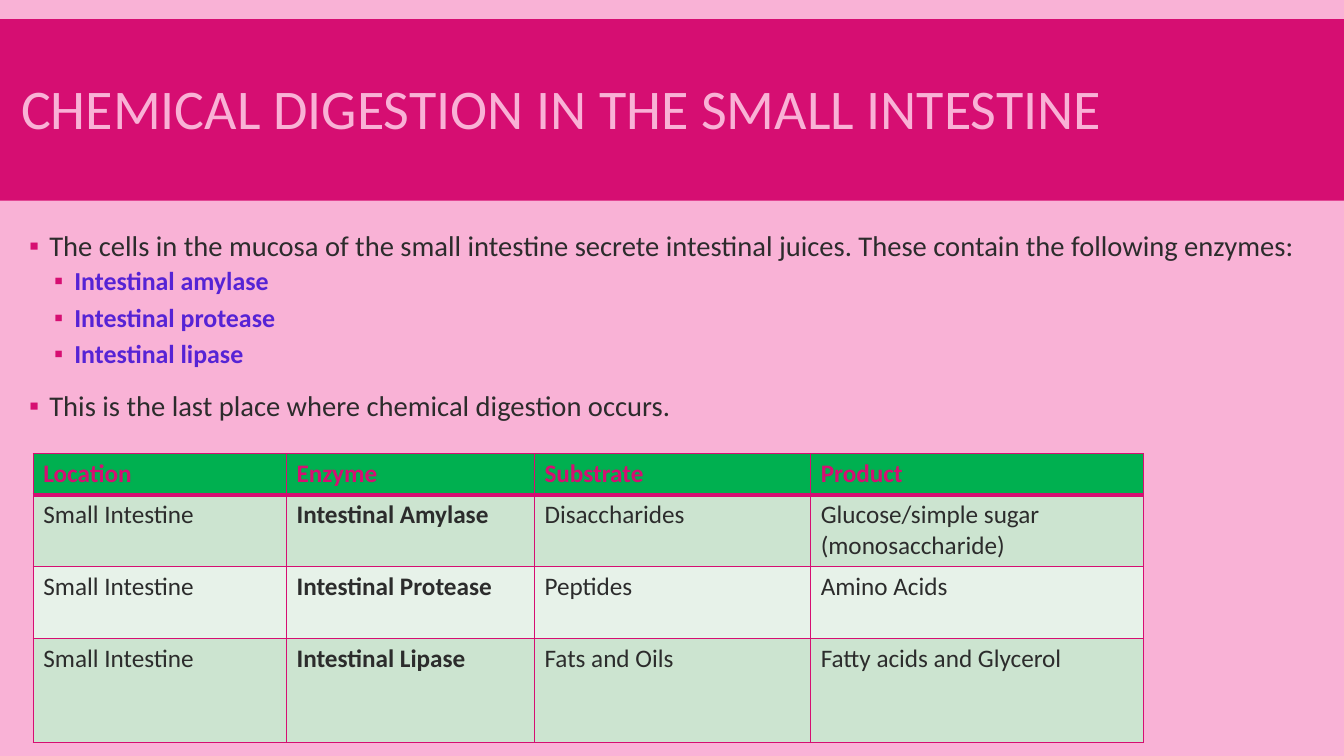
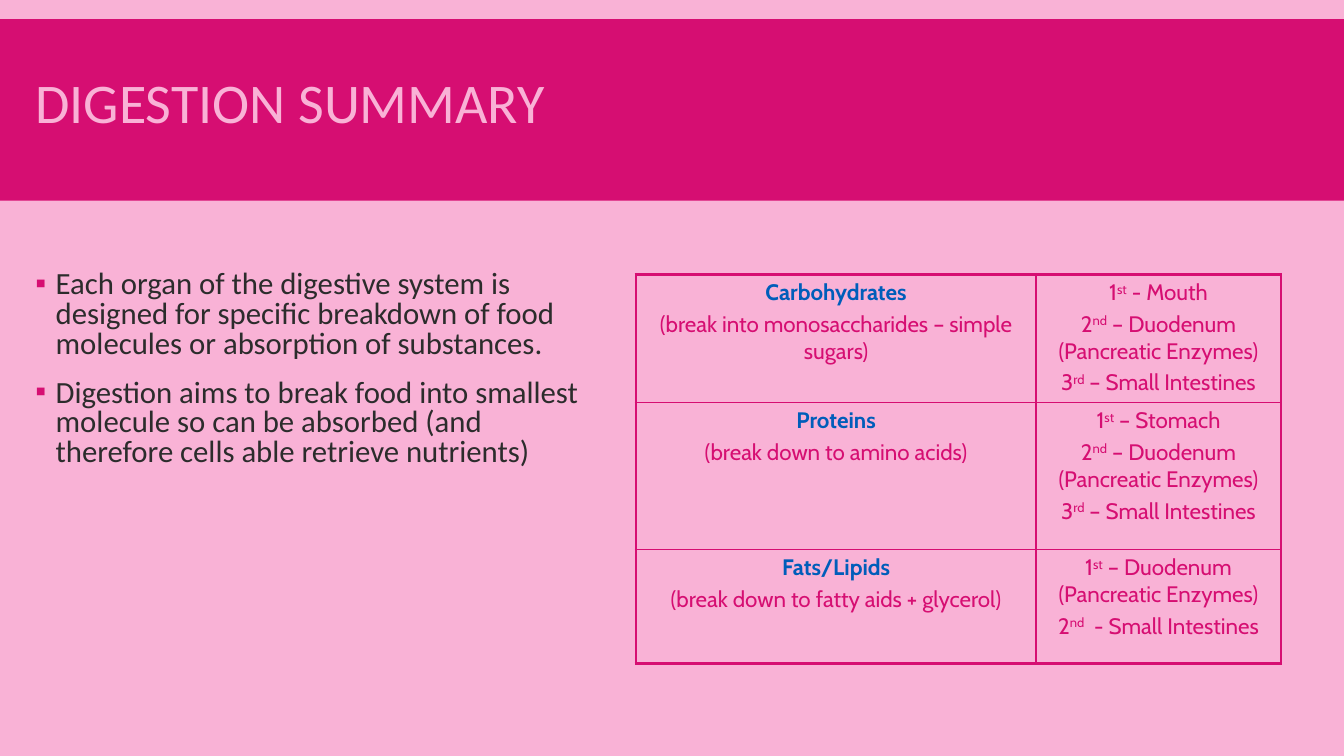
from lxml.etree import SubElement
from pptx import Presentation
from pptx.dml.color import RGBColor
from pptx.enum.shapes import MSO_SHAPE
from pptx.enum.text import MSO_ANCHOR, MSO_AUTO_SIZE, PP_ALIGN
from pptx.oxml.ns import qn
from pptx.util import Cm, Pt

COLOURS = {
    "background": "F9B2D6",
    "accent": "D60E72",
    "text": "2C2C2C",
    "enzyme": "5623D5",
    "nutrient": "005DBA",
    "header": "00B050",
    "odd_row": "CCE4D0",
    "even_row": "E7F2E9",
}
TITLE_FORMAT = {"name": "Calibri", "size": Pt(40), "bold": False}
ENZYME_FORMAT = {"name": "Calibri", "size": Pt(18)}
SUMMARY_FORMAT = {"name": "Cabin", "size": Pt(16)}
ORDINALS = ("st", "nd", "rd")


def write_run(paragraph, text, colour, formats):
    run = paragraph.add_run()
    run.text = text
    for attribute, value in formats.items():
        setattr(run.font, attribute, value)
    run.font.color.rgb = RGBColor.from_string(COLOURS[colour])
    return run


def draw_borders(cell, widths):
    """Widths in points: left, right, top, bottom."""
    properties = cell._tc.get_or_add_tcPr()
    for side, width in zip(("lnL", "lnR", "lnT", "lnB"), widths):
        line = SubElement(properties, qn(f"a:{side}"), w=str(Pt(width)))
        fill = SubElement(line, qn("a:solidFill"))
        SubElement(fill, qn("a:srgbClr"), val=COLOURS["accent"])


presentation = Presentation()
presentation.slide_width = Cm(33.87)
presentation.slide_height = Cm(19.05)
layout = presentation.slide_layouts[1]

# Shared background
master_fill = presentation.slide_master.background.fill
master_fill.solid()
master_fill.fore_color.rgb = RGBColor.from_string(COLOURS["background"])

# Titles and bullet lists; each bullet is (level, text)
contents = [
    {
        "title": "CHEMICAL DIGESTION IN THE SMALL INTESTINE",
        "title_box": (0.28, 0.74, 31.29, 4.19),
        "list_box": (0.48, 5.72, 32.64, 5.5),
        "size": 20.4,
        "line_spacing": 0.9,
        "bullets": [
            (0, "The cells in the mucosa of the small intestine secrete intestinal juices. "
                "These contain the following enzymes:"),
            (1, "Intestinal amylase"),
            (1, "Intestinal protease"),
            (1, "Intestinal lipase"),
            (0, "This is the last place where chemical digestion occurs."),
        ],
    },
    {
        "title": "DIGESTION SUMMARY",
        "title_box": (0.64, 0.58, 27.18, 4.19),
        "list_box": (0.64, 6.71, 14.71, 12.17),
        "size": 22,
        "line_spacing": 0.8,
        "bullets": [
            (0, "Each organ of the digestive system is designed for specific breakdown "
                "of food molecules or absorption of substances."),
            (0, "Digestion aims to break food into smallest molecule so can be absorbed "
                "(and therefore cells able retrieve nutrients)"),
        ],
    },
]

slides = []
for content in contents:
    slide = presentation.slides.add_slide(layout)
    slides.append(slide)
    title, bullet_list = slide.shapes.title, slide.placeholders[1]
    for holder, box in ((title, content["title_box"]), (bullet_list, content["list_box"])):
        holder.left, holder.top, holder.width, holder.height = map(Cm, box)
        holder.text_frame.auto_size = MSO_AUTO_SIZE.NONE
        holder.text_frame.word_wrap = True

    title.text_frame.vertical_anchor = MSO_ANCHOR.MIDDLE
    heading = title.text_frame.paragraphs[0]
    heading.alignment = PP_ALIGN.LEFT
    heading.line_spacing = 0.85
    write_run(heading, content["title"], "background", TITLE_FORMAT)

    for index, (level, text) in enumerate(content["bullets"]):
        frame = bullet_list.text_frame
        bullet = frame.add_paragraph() if index else frame.paragraphs[0]
        bullet.level = level
        bullet.line_spacing = content["line_spacing"]
        bullet.space_before = Pt(2 if level else 12)
        bullet.space_after = Pt(4 if level else 2)
        properties = bullet._p.get_or_add_pPr()
        properties.set("marL", str(Cm(1.14 if level else 0.51)))
        properties.set("indent", str(Cm(-0.51)))
        marker_colour = SubElement(properties, qn("a:buClr"))
        SubElement(marker_colour, qn("a:srgbClr"), val=COLOURS["accent"])
        SubElement(properties, qn("a:buChar"), char="▪")
        size = Pt(18.5 if level else content["size"])
        write_run(bullet, text, "enzyme" if level else "text",
                  {"name": "Calibri", "size": size, "bold": bool(level)})

# Title band, moved to the layout so that both slides share it
band = slides[0].shapes.add_shape(
    MSO_SHAPE.RECTANGLE, 0, Cm(0.48), presentation.slide_width, Cm(4.58))
band.shadow.inherit = False
band.fill.solid()
band.fill.fore_color.rgb = RGBColor.from_string(COLOURS["accent"])
band.line.fill.background()
layout.shapes._spTree.insert(2, band._element)

# Enzyme table
enzyme_rows = [
    ("Location", "Enzyme", "Substrate", "Product"),
    ("Small Intestine", "Intestinal Amylase", "Disaccharides",
     "Glucose/simple sugar (monosaccharide)"),
    ("Small Intestine", "Intestinal Protease", "Peptides", "Amino Acids"),
    ("Small Intestine", "Intestinal Lipase", "Fats and Oils", "Fatty acids and Glycerol"),
]
enzyme_table = slides[0].shapes.add_table(
    4, 4, Cm(0.84), Cm(11.43), Cm(27.97), Cm(7.27)).table
for column, width in zip(enzyme_table.columns, (6.38, 6.25, 6.96, 8.38)):
    column.width = Cm(width)
for row, height in zip(enzyme_table.rows, (1.04, 1.81, 1.81, 2.61)):
    row.height = Cm(height)
for r, texts in enumerate(enzyme_rows):
    row_fill = "header" if r == 0 else ("odd_row" if r % 2 else "even_row")
    for c, text in enumerate(texts):
        cell = enzyme_table.cell(r, c)
        draw_borders(cell, (1, 1, 3 if r == 1 else 1, 3 if r == 0 else 1))
        cell.fill.solid()
        cell.fill.fore_color.rgb = RGBColor.from_string(COLOURS[row_fill])
        write_run(cell.text_frame.paragraphs[0], text, "text" if r else "accent",
                  ENZYME_FORMAT | {"bold": r == 0 or c == 1})

# Summary table: nutrient, result, places of digestion in order
summary_rows = [
    ("Carbohydrates", "(break into monosaccharides – simple sugars)",
     (" - Mouth", " – Duodenum (Pancreatic Enzymes)", " – Small Intestines")),
    ("Proteins", "(break down to amino acids)",
     (" – Stomach", " – Duodenum (Pancreatic Enzymes)", " – Small Intestines")),
    ("Fats/Lipids", "(break down to fatty aids + glycerol)",
     (" – Duodenum (Pancreatic Enzymes)", "  - Small Intestines")),
]
summary_table = slides[1].shapes.add_table(
    3, 2, Cm(16.03), Cm(6.91), Cm(16.25), Cm(9.8)).table
summary_table.first_row = False
summary_table.horz_banding = False
for column, width in zip(summary_table.columns, (10.08, 6.17)):
    column.width = Cm(width)
for row, height in zip(summary_table.rows, (3.23, 3.7, 2.87)):
    row.height = Cm(height)
for r, (nutrient, result, places) in enumerate(summary_rows):
    nutrient_cell, places_cell = summary_table.cell(r, 0), summary_table.cell(r, 1)
    top, bottom = (2.25 if r == edge else 1 for edge in (0, 2))
    draw_borders(nutrient_cell, (2.25, 1, top, bottom))
    draw_borders(places_cell, (1, 2.25, top, bottom))

    frame = nutrient_cell.text_frame
    write_run(frame.paragraphs[0], nutrient, "nutrient", SUMMARY_FORMAT | {"bold": True})
    write_run(frame.add_paragraph(), result, "accent", SUMMARY_FORMAT | {"bold": False})

    frame = places_cell.text_frame
    for index, place in enumerate(places):
        step = frame.add_paragraph() if index else frame.paragraphs[0]
        for part in (str(index + 1), ORDINALS[index], place):
            run = write_run(step, part, "accent", SUMMARY_FORMAT | {"bold": False})
            if part in ORDINALS:
                run.font._element.set("baseline", "30000")

    for cell in (nutrient_cell, places_cell):
        cell.fill.background()
        for paragraph in cell.text_frame.paragraphs:
            paragraph.alignment = PP_ALIGN.CENTER
            paragraph.space_before = Pt(3.2)

presentation.save("out.pptx")
